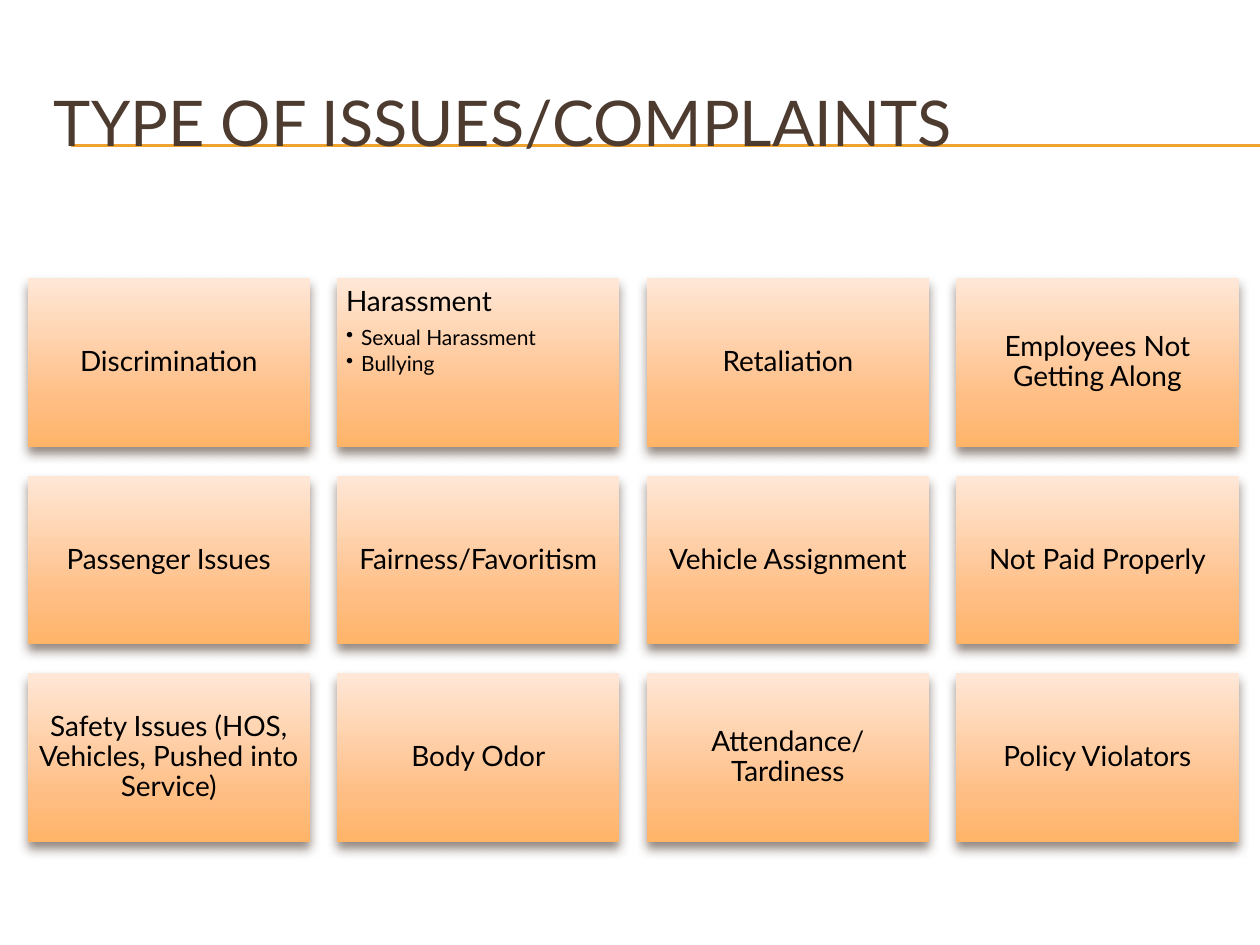
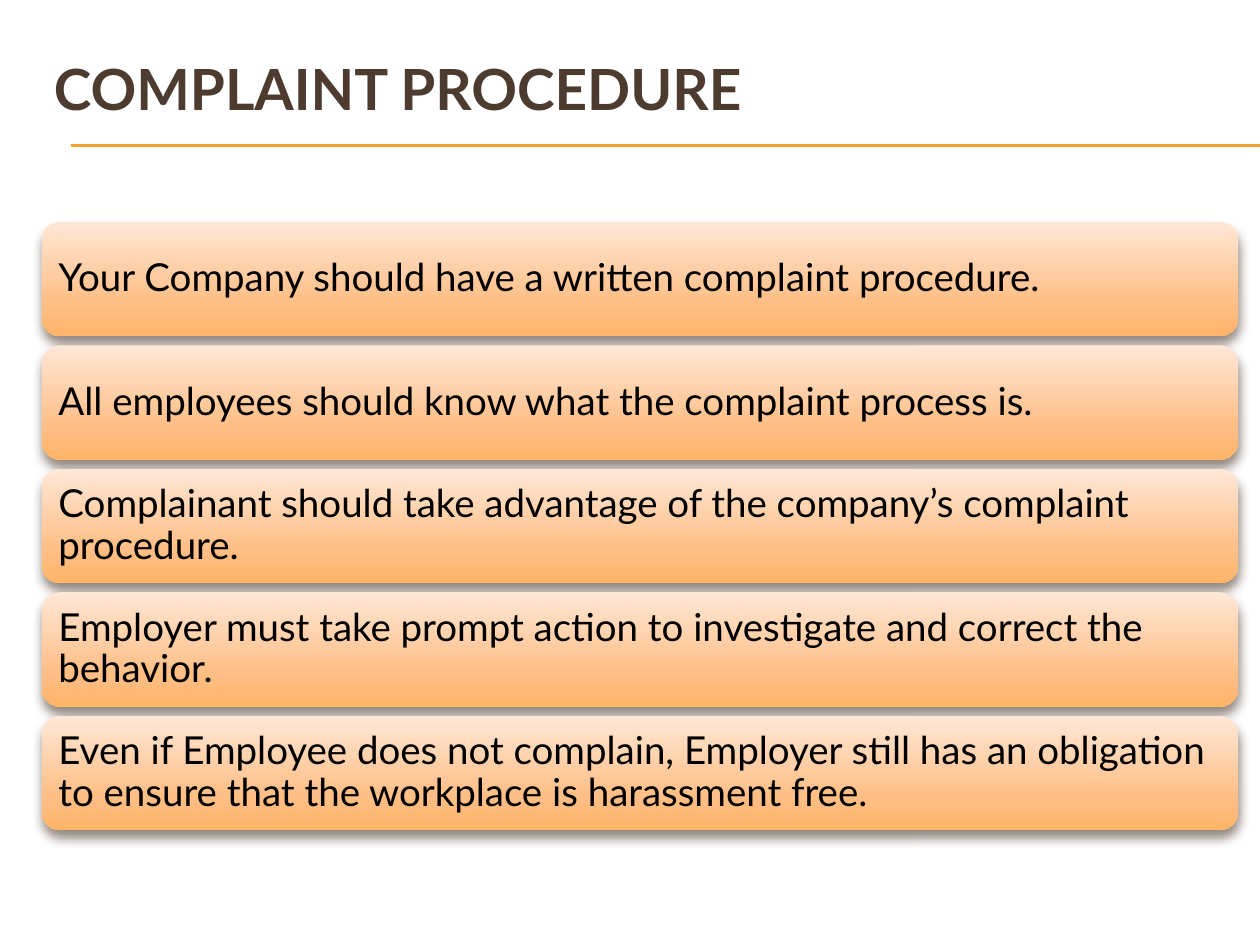
from lxml.etree import SubElement as Sub
from pptx import Presentation
from pptx.dml.color import RGBColor
from pptx.enum.shapes import MSO_CONNECTOR, MSO_SHAPE
from pptx.enum.text import MSO_ANCHOR as Anchor, PP_ALIGN as Align
from pptx.oxml import parse_xml
from pptx.oxml.ns import nsdecls, qn
from pptx.util import Inches, Pt

BROWN = RGBColor(0x4E, 0x3B, 0x30)
GOLD = RGBColor(0xF0, 0xA2, 0x2E)
BLACK = RGBColor(0, 0, 0)
PALE = RGBColor(0xFF, 0xE7, 0xD7)
PEACH = RGBColor(0xFF, 0xBE, 0x84)
AMBER = RGBColor(0xFF, 0xB4, 0x68)
FONT = "Lato"

STOPS = "".join(
    f'<a:gs pos="{pos * 1000}"><a:srgbClr val="{tint}"/></a:gs>'
    for pos, tint in [(0, PALE), (72, PEACH), (100, AMBER)])
GLOW = (f'<a:gradFill {nsdecls("a")} rotWithShape="1"><a:gsLst>{STOPS}</a:gsLst>'
        '<a:lin ang="5400000" scaled="0"/></a:gradFill>')
SHADE = (f'<a:effectLst {nsdecls("a")}><a:outerShdw blurRad="{Pt(6)}" dist="{Pt(4)}" '
         f'dir="5400000" rotWithShape="0"><a:srgbClr val="{BROWN}">'
         '<a:alpha val="60000"/></a:srgbClr></a:outerShdw></a:effectLst>')

ISSUES = [
    ["Discrimination", "Harassment\nSexual Harassment\nBullying", "Retaliation",
     "Employees Not Getting Along"],
    ["Passenger Issues", "Fairness/Favoritism", "Vehicle Assignment", "Not Paid Properly"],
    ["Safety Issues (HOS, Vehicles, Pushed into Service)", "Body Odor",
     "Attendance/Tardiness", "Policy Violators"],
]
RULES = [
    "Your Company should have a written complaint procedure.",
    "All employees should know what the complaint process is.",
    "Complainant should take advantage of the company’s complaint procedure.",
    "Employer must take prompt action to investigate and correct the behavior.",
    "Even if Employee does not complain, Employer still has an obligation to ensure "
    "that the workplace is harassment free.",
]


def add_page(title, top, size, bold):
    page = deck.slides.add_slide(deck.slide_layouts[6])
    for y in (1.15, 1.16):
        line = page.shapes.add_connector(
            MSO_CONNECTOR.STRAIGHT, Inches(0.56), Inches(y), Inches(10), Inches(y))
        line.line.color.rgb = GOLD
        line.line.width = Pt(0.75)
        Sub(line._element.spPr, qn("a:effectLst"))
    box = page.shapes.add_textbox(Inches(0.33), Inches(top), Inches(9.5), Inches(0.92))
    frame = box.text_frame
    frame.word_wrap = True
    frame.vertical_anchor = Anchor.MIDDLE
    frame.text = title
    font = frame.paragraphs[0].runs[0].font
    font.name, font.size, font.bold = FONT, Pt(size), bold
    font.color.rgb = BROWN
    return page


def add_card(page, kind, x, y, w, h, text, size, inset, align):
    card = page.shapes.add_shape(kind, Inches(x), Inches(y), Inches(w), Inches(h))
    card.line.fill.background()
    props = card._element.spPr
    props.insert(2, parse_xml(GLOW))
    props.append(parse_xml(SHADE))
    frame = card.text_frame
    frame.word_wrap = True
    frame.margin_left = frame.margin_right = Inches(inset)
    frame.margin_top = frame.margin_bottom = Inches(inset)
    frame.vertical_anchor = Anchor.MIDDLE
    frame.text = text
    for para in frame.paragraphs:
        para.alignment = align
        para.line_spacing = 0.9
        para.space_after = Pt(size * 0.35)
        font = para.runs[0].font
        font.name, font.size = FONT, Pt(size)
        font.color.rgb = BLACK
    return frame


deck = Presentation()
deck.slide_width, deck.slide_height = Inches(10), Inches(7.5)

page = add_page("TYPE OF ISSUES/COMPLAINTS", 0.5, 36, False)
for row, names in enumerate(ISSUES):
    for col, name in enumerate(names):
        x = 0.22 + col * (7.59 - 0.22) / 3
        y = 2.21 + row * (5.34 - 2.21) / 2
        listed = "\n" in name
        frame = add_card(page, MSO_SHAPE.RECTANGLE, x, y, 2.24, 1.34, name, 16, 0.07,
                         Align.LEFT if listed else Align.CENTER)
        if listed:
            frame.vertical_anchor = Anchor.TOP
        for para in frame.paragraphs[1:]:
            para.level = 1
            para.space_after = Pt(12 * 0.15)
            para.runs[0].font.size = Pt(12)
            props = para._p.get_or_add_pPr()
            props.set("marL", str(Inches(0.12)))
            props.set("indent", str(-Inches(0.12)))
            Sub(props, qn("a:buChar")).set("char", "•")

page = add_page("COMPLAINT PROCEDURE", 0.24, 32.4, True)
for row, rule in enumerate(RULES):
    add_card(page, MSO_SHAPE.ROUNDED_RECTANGLE, 0.33, 1.76 + row * 0.98, 9.5, 0.91,
             rule, 22, 0.09, Align.LEFT)

deck.save("out.pptx")
